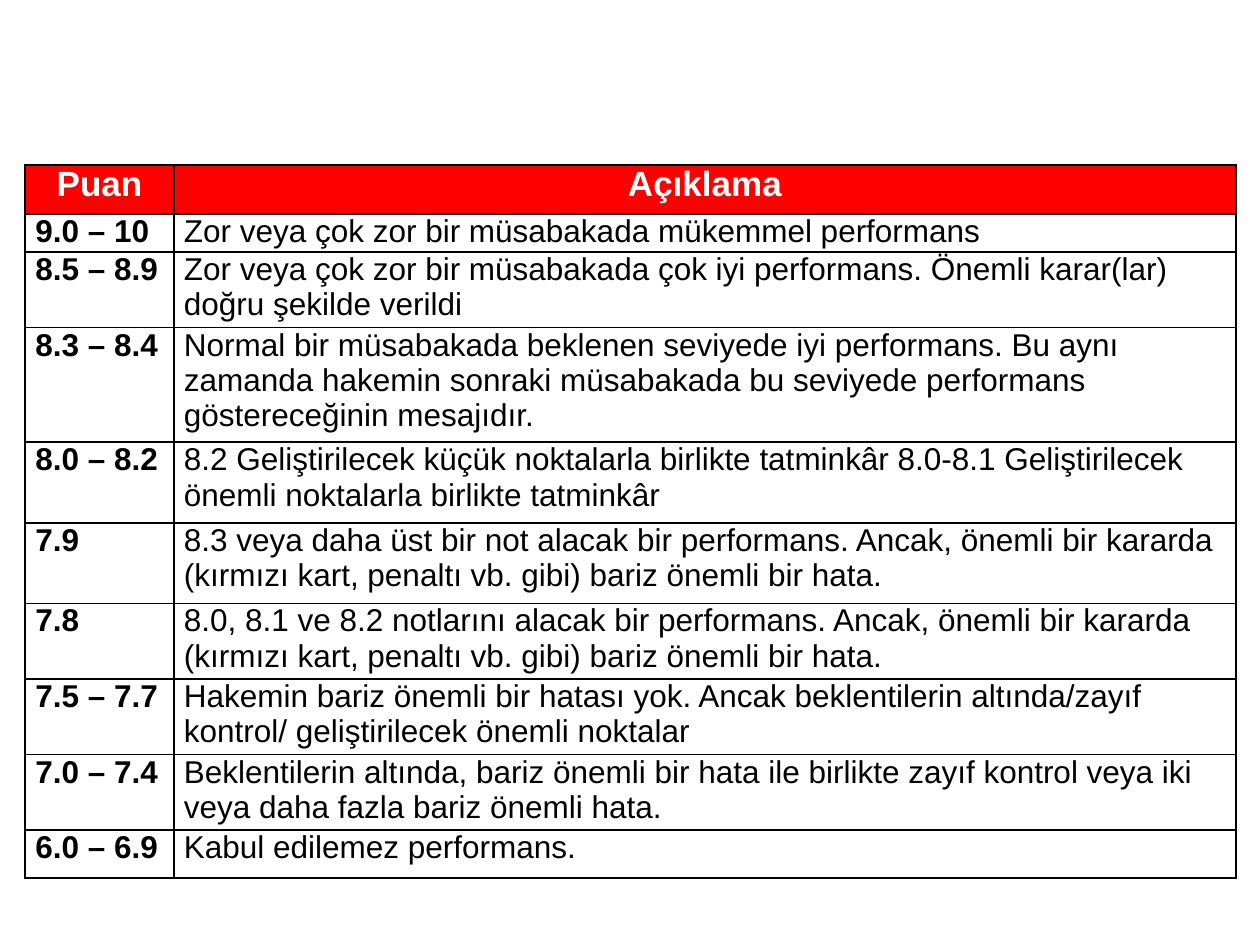
from lxml.etree import SubElement
from pptx import Presentation
from pptx.dml.color import RGBColor
from pptx.enum.text import PP_ALIGN
from pptx.oxml.ns import qn
from pptx.util import Inches, Pt

COLORS = {"header": "FF0000", "header_text": "FFFFFF", "text": "000000", "border": "000000"}
FONT = "Arial"
COLUMN_WIDTHS = [1.18, 8.43]
HEADER = ("Puan", "Açıklama")
HEADER_HEIGHT = 0.39
SCORES = [
    (0.3, "9.0 – 10", "Zor veya çok zor bir müsabakada mükemmel performans"),
    (0.6, "8.5 – 8.9", "Zor veya çok zor bir müsabakada çok iyi performans. "
     "Önemli karar(lar) doğru şekilde verildi"),
    (0.91, "8.3 – 8.4", "Normal bir müsabakada beklenen seviyede iyi performans. "
     "Bu aynı zamanda hakemin sonraki müsabakada bu seviyede performans "
     "göstereceğinin mesajıdır."),
    (0.64, "8.0 – 8.2", "8.2 Geliştirilecek küçük noktalarla birlikte tatminkâr "
     "8.0-8.1 Geliştirilecek önemli noktalarla birlikte tatminkâr"),
    (0.64, "7.9", "8.3 veya daha üst bir not alacak bir performans. Ancak, önemli "
     "bir kararda (kırmızı kart, penaltı vb. gibi) bariz önemli bir hata."),
    (0.6, "7.8", "8.0, 8.1 ve 8.2 notlarını alacak bir performans. Ancak, önemli "
     "bir kararda (kırmızı kart, penaltı vb. gibi) bariz önemli bir hata."),
    (0.6, "7.5 – 7.7", "Hakemin bariz önemli bir hatası yok. Ancak beklentilerin "
     "altında/zayıf kontrol/ geliştirilecek önemli noktalar"),
    (0.6, "7.0 – 7.4", "Beklentilerin altında, bariz önemli bir hata ile birlikte "
     "zayıf kontrol veya iki veya daha fazla bariz önemli hata."),
    (0.38, "6.0 – 6.9", "Kabul edilemez performans."),
]


def add_borders(cell):
    properties = cell._tc.get_or_add_tcPr()
    for side in ("a:lnL", "a:lnR", "a:lnT", "a:lnB"):
        line = SubElement(properties, qn(side), w=str(Pt(1)))
        fill = SubElement(line, qn("a:solidFill"))
        SubElement(fill, qn("a:srgbClr"), val=COLORS["border"])


def fill_cell(cell, text, is_header, bold):
    cell.margin_left = cell.margin_right = Inches(0.08)
    cell.margin_top = cell.margin_bottom = 0
    add_borders(cell)
    if is_header:
        cell.fill.solid()
        cell.fill.fore_color.rgb = RGBColor.from_string(COLORS["header"])
    else:
        cell.fill.background()
    cell.text_frame.text = text
    paragraph = cell.text_frame.paragraphs[0]
    paragraph.alignment = PP_ALIGN.CENTER if is_header else PP_ALIGN.LEFT
    font = paragraph.runs[0].font
    font.name = FONT
    font.size = Pt(20 if is_header else 18)
    font.bold = bold
    font.color.rgb = RGBColor.from_string(COLORS["header_text" if is_header else "text"])


def add_score_table(slide, left, top, width, height):
    rows = [(HEADER_HEIGHT, *HEADER), *SCORES]
    table = slide.shapes.add_table(len(rows), len(HEADER), left, top, width, height).table
    table.horz_banding = False
    for column, column_width in zip(table.columns, COLUMN_WIDTHS):
        column.width = Inches(column_width)
    for row_index, (row_height, *texts) in enumerate(rows):
        table.rows[row_index].height = Inches(row_height)
        is_header = row_index == 0
        for column_index, text in enumerate(texts):
            fill_cell(table.cell(row_index, column_index), text, is_header,
                      bold=is_header or column_index == 0)


def main():
    presentation = Presentation()
    presentation.slide_width = Inches(10)
    presentation.slide_height = Inches(7.5)
    slide = presentation.slides.add_slide(presentation.slide_layouts[6])
    add_score_table(slide, Inches(0.2), Inches(1.31), Inches(9.61), Inches(5.67))
    presentation.save("out.pptx")


if __name__ == "__main__":
    main()
